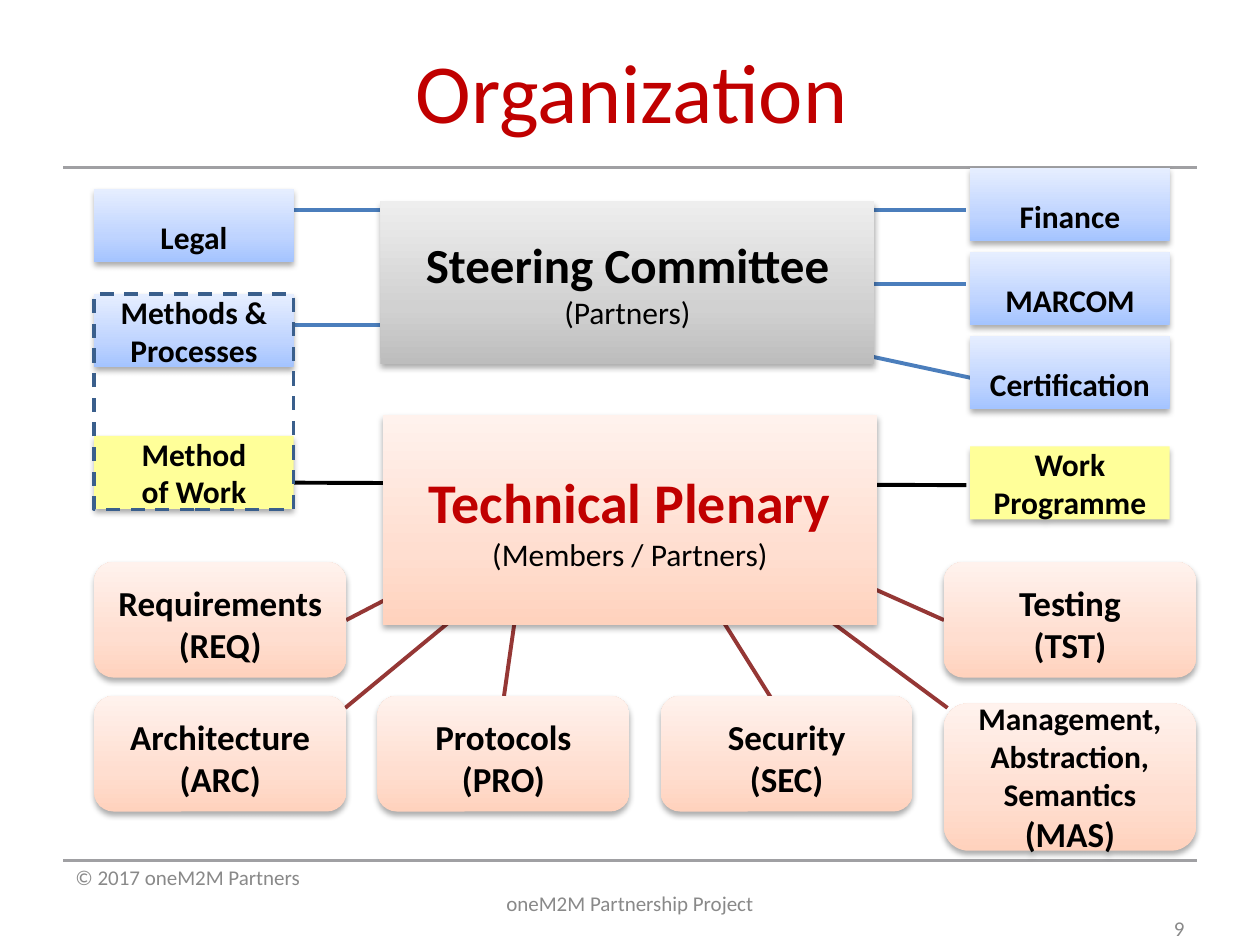
from copy import deepcopy

from lxml import etree
from pptx import Presentation
from pptx import util as u
from pptx.dml.color import RGBColor
from pptx.enum import dml, shapes, text
from pptx.oxml import ns

BLUE = ("A4C4FF", "BFD4FF", "E6EEFF")
PEACH = ("FFD2BD", "FFDED0", "FFF2ED")
GREY = ("BDBDBD", "D1D1D1", "EEEEEE")
YELLOW = "FFFF99"
BLACK, RED, MUTED = "000000", "C00000", "898989"
BLUE_LINE, RED_LINE, RULE = "4B7EBC", "953735", "A0A0A3"

LEFT, RIGHT = 1.9, 19.56
SMALL = (4.02, 1.47)
GROUP = (5.08, 2.33)
COLUMNS = [LEFT + 5.71 * index for index in range(4)]
UPPER, LOWER = 11.33, 14.03


def color(value):
    return RGBColor.from_string(value)


class SlideBuilder:
    font_name = "Calibri"

    def __init__(self, slide):
        self.slide = slide

    def style_paragraph(self, paragraph, size, ink=BLACK, bold=False,
                        align=text.PP_ALIGN.CENTER):
        paragraph.alignment = align
        font = paragraph.font
        font.name = self.font_name
        font.size = u.Pt(size)
        font.bold = bold
        font.color.rgb = color(ink)

    def set_text(self, frame, lines, anchor=text.MSO_ANCHOR.MIDDLE):
        frame.word_wrap = True
        frame.vertical_anchor = anchor
        for index, (wording, *style) in enumerate(lines):
            paragraph = frame.paragraphs[0] if index == 0 else frame.add_paragraph()
            paragraph.text = wording
            self.style_paragraph(paragraph, *style)

    def title(self, wording):
        shape = self.slide.shapes.title
        shape.left, shape.top = u.Cm(4.5), u.Cm(0.6)
        shape.width, shape.height = u.Cm(16.46), u.Cm(3.18)
        shape.text_frame.margin_top = u.Cm(0.2)
        self.set_text(shape.text_frame, [(wording, 48, RED)], text.MSO_ANCHOR.TOP)

    def line(self, start, end, ink, width=2.25):
        points = [u.Cm(value) for value in (*start, *end)]
        connector = self.slide.shapes.add_connector(shapes.MSO_CONNECTOR.STRAIGHT, *points)
        connector.line.color.rgb = color(ink)
        connector.line.width = u.Pt(width)
        etree.SubElement(connector.element.spPr, ns.qn("a:effectLst"))

    def shape(self, kind, position, size):
        lengths = [u.Cm(value) for value in (*position, *size)]
        shape = self.slide.shapes.add_shape(kind, *lengths)
        shape.shadow.inherit = False
        return shape

    def gradient(self, fill, inks):
        fill.gradient()
        fill.gradient_angle = 90
        first = fill.gradient_stops[0]._element
        first.addnext(deepcopy(first))
        for stop, ink, position in zip(fill.gradient_stops, inks, (0, 0.35, 1)):
            stop.color.rgb = color(ink)
            stop.position = position

    def shadow(self, shape):
        effects = shape.element.spPr.find(ns.qn("a:effectLst"))
        outer = etree.SubElement(effects, ns.qn("a:outerShdw"), blurRad=str(u.Pt(3.5)),
                                 dist=str(u.Pt(2.2)), dir="5400000", rotWithShape="0")
        ink = etree.SubElement(outer, ns.qn("a:srgbClr"), val=BLACK)
        etree.SubElement(ink, ns.qn("a:alpha"), val="32000")

    def box(self, position, size, fill, lines, anchor=text.MSO_ANCHOR.MIDDLE, rounded=False):
        kind = shapes.MSO_SHAPE.ROUNDED_RECTANGLE if rounded else shapes.MSO_SHAPE.RECTANGLE
        shape = self.shape(kind, position, size)
        if isinstance(fill, tuple):
            self.gradient(shape.fill, fill)
        else:
            shape.fill.solid()
            shape.fill.fore_color.rgb = color(fill)
        shape.line.fill.background()
        self.shadow(shape)
        self.set_text(shape.text_frame, lines, anchor)

    def small_box(self, position, wording, fill=BLUE, anchor=text.MSO_ANCHOR.MIDDLE):
        self.box(position, SMALL, fill, [(wording, 18, BLACK, True)], anchor)

    def group_box(self, position, name, code):
        self.box(position, GROUP, PEACH, [(f"{name}\v({code})", 20, BLACK, True)],
                 text.MSO_ANCHOR.BOTTOM, rounded=True)

    def dashed_frame(self, position, size):
        shape = self.shape(shapes.MSO_SHAPE.RECTANGLE, position, size)
        shape.fill.background()
        shape.line.color.rgb = color("3A5F8C")
        shape.line.width = u.Pt(2)
        shape.line.dash_style = dml.MSO_LINE.DASH

    def footer(self, entries):
        lengths = [u.Cm(value) for value in (1.27, 17.35, 22.86, 1.7)]
        frame = self.slide.shapes.add_textbox(*lengths).text_frame
        self.set_text(frame, [(wording, 12, MUTED, False, align) for wording, align in entries])


def main():
    presentation = Presentation()
    presentation.slide_width, presentation.slide_height = u.Cm(25.4), u.Cm(19.05)
    builder = SlideBuilder(presentation.slides.add_slide(presentation.slide_layouts[5]))
    builder.title("Organization")

    for y in (17.35, 3.38):
        builder.line((1.27, y), (24.13, y), RULE, 1.75)
    for start, end in [
        ((15.67, 6.78), (21.59, 8.05)),
        ((5.93, 6.56), (11.86, 6.56)),
        ((16.94, 5.72), (19.48, 5.72)),
        ((5.93, 4.23), (19.48, 4.23)),
    ]:
        builder.line(start, end, BLUE_LINE)
    hub = (12.7, 9.53)
    for start, end in [
        ((12.75, 9.7), (19.03, 12.5)),
        (hub, (6.98, 12.5)),
        (hub, (6.96, 14.27)),
        ((10.8, 9.53), (10.16, 14.03)),
        (hub, (15.67, 14.27)),
        (hub, (19.1, 14.27)),
    ]:
        builder.line(start, end, RED_LINE)
    builder.line((5.93, 9.73), (19.48, 9.78), BLACK)

    builder.box((7.67, 4.06), (9.96, 3.28), GREY,
                [("Steering Committee", 28, BLACK, True), ("(Partners)", 18)])
    builder.box((7.72, 8.36), (9.96, 4.24), PEACH,
                [("Technical Plenary", 32, RED, True), ("(Members / Partners)", 18)])

    for column, row, name, code in [
        (0, UPPER, "Requirements", "REQ"),
        (3, UPPER, "Testing", "TST"),
        (0, LOWER, "Architecture", "ARC"),
        (1, LOWER, "Protocols", "PRO"),
        (2, LOWER, "Security", "SEC"),
    ]:
        builder.group_box((COLUMNS[column], row), name, code)
    builder.box((COLUMNS[3], 14.18), (5.08, 2.97), PEACH,
                [("Management,\vAbstraction,\vSemantics", 18, BLACK, True),
                 ("(MAS)", 20, BLACK, True)], rounded=True)

    bottom = text.MSO_ANCHOR.BOTTOM
    builder.small_box((LEFT, 3.81), "Legal", anchor=bottom)
    for index, name in enumerate(("Finance", "MARCOM", "Certification")):
        builder.small_box((RIGHT, 3.39 + 1.69 * index), name, anchor=bottom)
    builder.small_box((LEFT, 5.93), "Methods &\vProcesses")
    builder.small_box((LEFT, 8.79), "Method\vof Work", YELLOW)
    builder.small_box((RIGHT, 9), "Work\vProgramme", YELLOW)
    builder.dashed_frame((LEFT, 5.93), (4.02, 4.34))

    builder.footer([
        ("© 2017 oneM2M Partners", text.PP_ALIGN.LEFT),
        ("oneM2M Partnership Project", text.PP_ALIGN.CENTER),
        ("9", text.PP_ALIGN.RIGHT),
    ])
    presentation.save("out.pptx")


if __name__ == "__main__":
    main()
